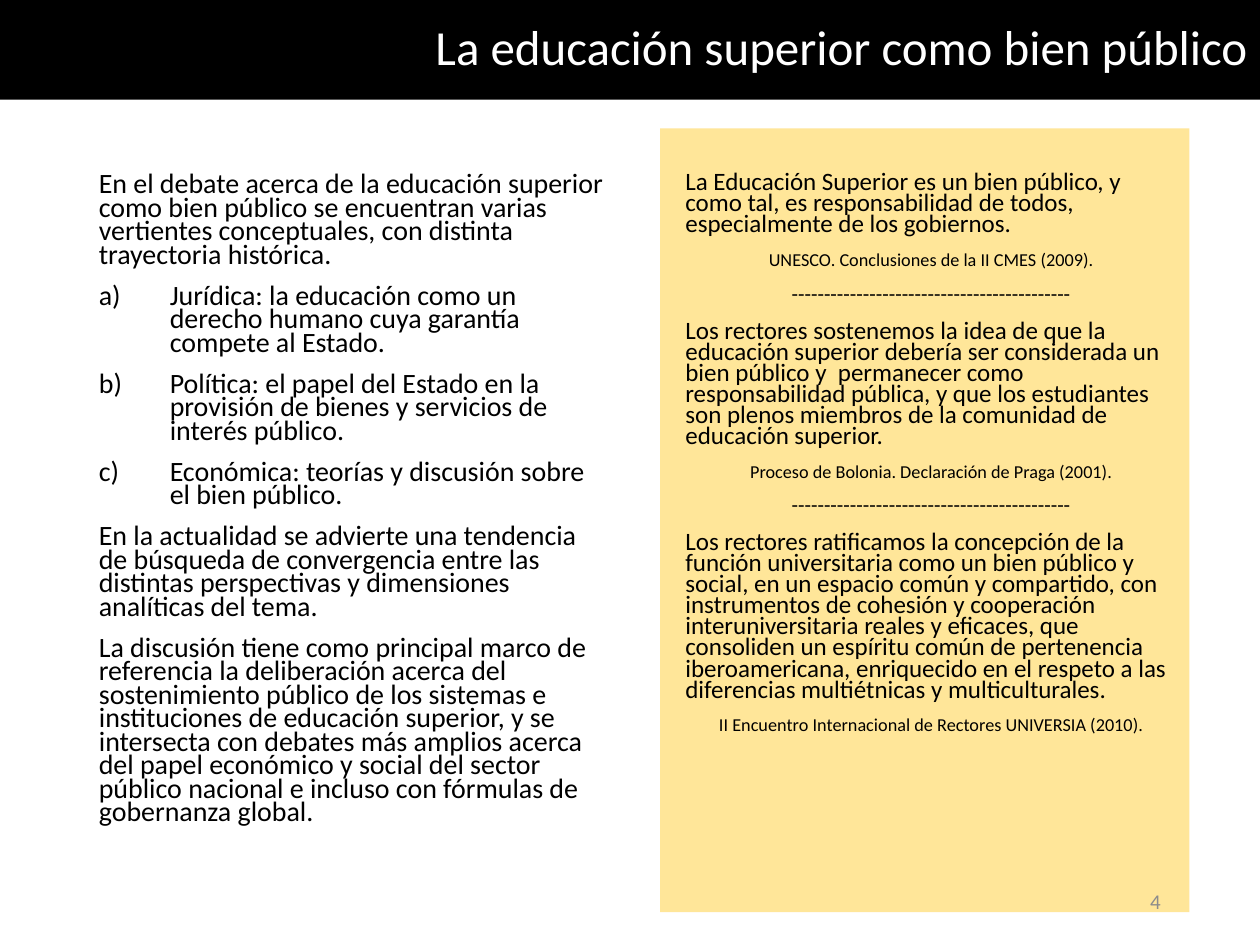
from pptx import Presentation
from pptx.dml.color import RGBColor
from pptx.enum.text import MSO_ANCHOR, MSO_AUTO_SIZE, PP_ALIGN
from pptx.oxml.ns import qn
from pptx.util import Pt

LEFT, CENTER, RIGHT = PP_ALIGN.LEFT, PP_ALIGN.CENTER, PP_ALIGN.RIGHT
MIDDLE = MSO_ANCHOR.MIDDLE
NO_AUTOFIT = MSO_AUTO_SIZE.NONE
FONT = "Calibri"
BLACK, WHITE, CREAM, GRAY = "000000", "FFFFFF", "FFE699", "8C8C8C"

INTRO = "En el debate acerca de la educación superior como bien público se encuentran varias vertientes conceptuales, con distinta trayectoria histórica."
STRANDS = [
    "Jurídica: la educación como un derecho humano cuya garantía compete al Estado.",
    "Política: el papel del Estado en la provisión de bienes y servicios de interés público.",
    "Económica: teorías y discusión sobre el bien público.",
]
CLOSING = [
    "En la actualidad se advierte una tendencia de búsqueda de convergencia entre las distintas perspectivas y dimensiones analíticas del tema.",
    "La discusión tiene como principal marco de referencia la deliberación acerca del sostenimiento público de los sistemas e instituciones de educación superior, y se intersecta con debates más amplios acerca del papel económico y social del sector público nacional e incluso con fórmulas de gobernanza global.",
]
QUOTES = [
    ("La Educación Superior es un bien público, y como tal, es responsabilidad de todos, especialmente de los gobiernos.",
     "UNESCO. Conclusiones de la II CMES (2009)."),
    ("Los rectores sostenemos la idea de que la educación superior debería ser considerada un bien público y  permanecer como responsabilidad pública, y que los estudiantes son plenos miembros de la comunidad de educación superior.",
     "Proceso de Bolonia. Declaración de Praga (2001)."),
    ("Los rectores ratificamos la concepción de la función universitaria como un bien público y social, en un espacio común y compartido, con instrumentos de cohesión y cooperación interuniversitaria reales y eficaces, que consoliden un espíritu común de pertenencia iberoamericana, enriquecido en el respeto a las diferencias multiétnicas y multiculturales.",
     "II Encuentro Internacional de Rectores UNIVERSIA (2010)."),
]
DIVIDER = "-" * 43


def rgb(color):
    return RGBColor.from_string(color)


def fill(shape, color):
    shape.fill.solid()
    shape.fill.fore_color.rgb = rgb(color)


def style(paragraph, size, color, align=LEFT):
    paragraph.alignment = align
    for run in paragraph.runs:
        run.font.name = FONT
        run.font.size = Pt(size)
        run.font.color.rgb = rgb(color)


def number(paragraph, indent):
    properties = paragraph._p.get_or_add_pPr()
    properties.set("marL", str(Pt(indent)))
    properties.set("indent", str(-Pt(indent)))
    font = properties.makeelement(qn("a:buFont"), {"typeface": FONT})
    numbering = properties.makeelement(qn("a:buAutoNum"), {"type": "alphaLcParenR"})
    properties.extend([font, numbering])


def add_box(slide, box):
    text_box = slide.shapes.add_textbox(*map(Pt, box))
    text_box.text_frame.word_wrap = True
    return text_box


def write_paragraphs(frame, items):
    for index, (text, size, align, numbered) in enumerate(items):
        paragraph = frame.paragraphs[0] if index == 0 else frame.add_paragraph()
        paragraph.text = text
        paragraph.line_spacing = 0.7
        if index:
            paragraph.space_before = Pt(10)
        if numbered:
            number(paragraph, 40.5)
        style(paragraph, size, BLACK, align)


def title_bar(slide, box):
    title = slide.shapes.title
    title.left, title.top, title.width, title.height = map(Pt, box)
    fill(title, BLACK)
    frame = title.text_frame
    frame.text = "La educación superior como bien público"
    frame.auto_size = NO_AUTOFIT
    frame.vertical_anchor = MIDDLE
    frame.paragraphs[0].line_spacing = 0.9
    style(frame.paragraphs[0], 28, WHITE, RIGHT)


def debate_column(slide, box):
    frame = add_box(slide, box).text_frame
    frame.margin_top = Pt(26.5)
    items = [(INTRO, 16, LEFT, False)]
    items += [(strand, 16, LEFT, True) for strand in STRANDS]
    items += [(text, 16, LEFT, False) for text in CLOSING]
    write_paragraphs(frame, items)


def quotes_panel(slide, box):
    panel = add_box(slide, box)
    fill(panel, CREAM)
    frame = panel.text_frame
    frame.margin_left = Pt(14.4)
    frame.margin_top = Pt(25.8)
    items = []
    for quote, citation in QUOTES:
        if items:
            items.append((DIVIDER, 12.1, CENTER, False))
        items.append((quote, 14.3, LEFT, False))
        items.append((citation, 10.4, CENTER, False))
    write_paragraphs(frame, items)


def page_number(slide, box):
    frame = add_box(slide, box).text_frame
    frame.text = "4"
    frame.vertical_anchor = MIDDLE
    style(frame.paragraphs[0], 12, GRAY, RIGHT)


def main():
    deck = Presentation()
    deck.slide_width, deck.slide_height = Pt(720), Pt(540)
    slide = deck.slides.add_slide(deck.slide_layouts[5])
    title_bar(slide, (0, 0, 720, 56.9))
    debate_column(slide, (49.4, 73.4, 306, 413.3))
    quotes_panel(slide, (377.3, 73.4, 302.4, 447.8))
    page_number(slide, (508.3, 500.4, 162, 28.8))
    deck.save("out.pptx")


if __name__ == "__main__":
    main()
